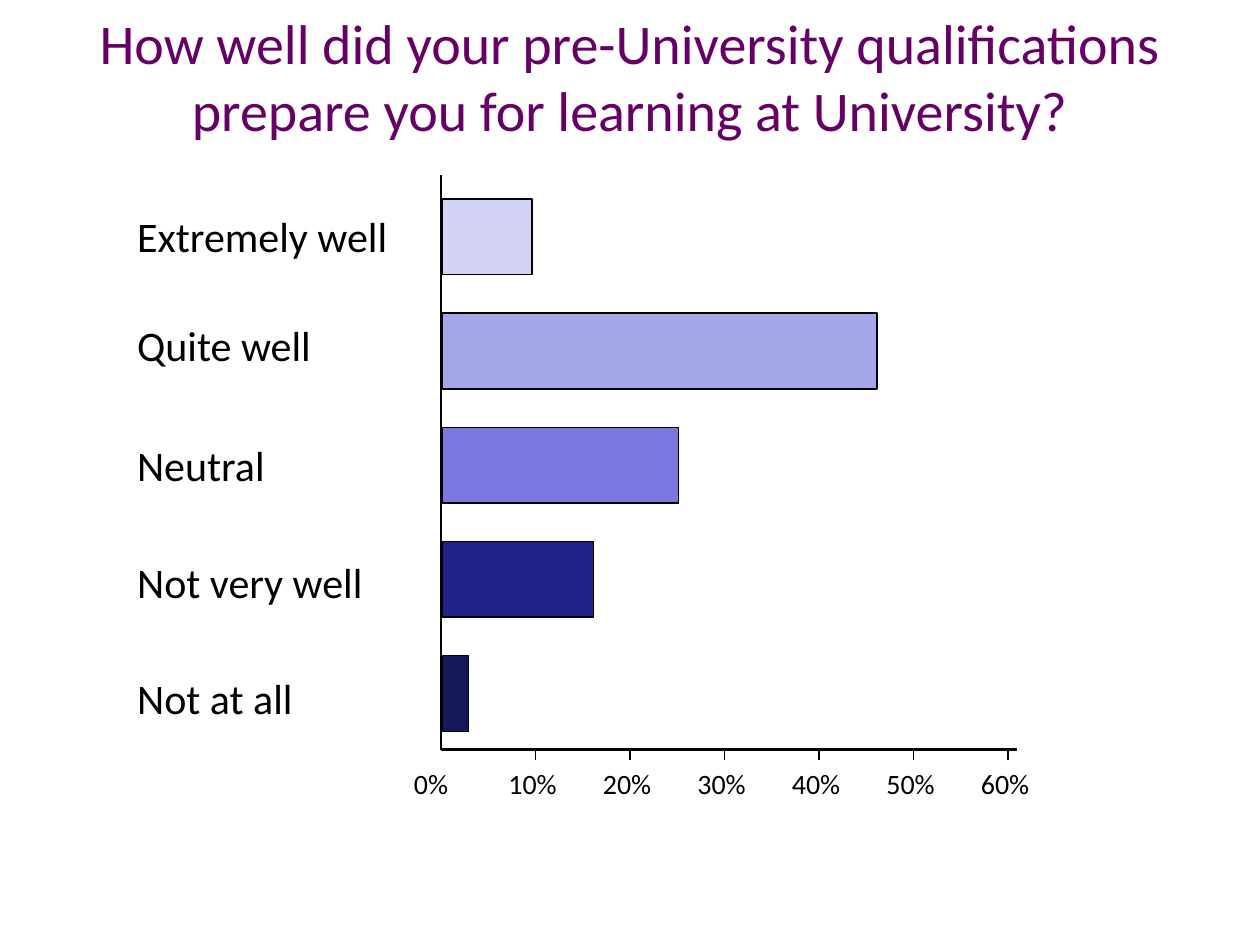
from dataclasses import dataclass

from lxml import etree
from pptx import Presentation
from pptx.dml.color import RGBColor
from pptx.enum.shapes import MSO_CONNECTOR, MSO_SHAPE
from pptx.enum.text import MSO_ANCHOR, PP_ALIGN
from pptx.oxml.ns import qn
from pptx.util import Pt

STRAIGHT = MSO_CONNECTOR.STRAIGHT
RECTANGLE = MSO_SHAPE.RECTANGLE
MIDDLE = MSO_ANCHOR.MIDDLE
CENTER = PP_ALIGN.CENTER


@dataclass(frozen=True)
class Theme:
    font: str = "Calibri"
    title: str = "660066"
    ink: str = "000000"
    title_size: float = 32
    answer_size: float = 24
    scale_size: float = 16
    axis_width: float = 1.5
    thin_width: float = 0.75


@dataclass(frozen=True)
class Answer:
    label: str
    percent: float
    color: str
    label_top: float
    label_width: float


THEME = Theme()
ANSWERS = [
    Answer("Extremely well", 9.5, "D2D2F4", 116.6, 178.5),
    Answer("Quite well", 46, "A5A5E9", 179.3, 133),
    Answer("Neutral", 25, "7878DE", 247.7, 99.5),
    Answer("Not very well", 16, "22228B", 314.6, 156),
    Answer("Not at all", 2.8, "17175C", 380.9, 121),
]

# Plot geometry in points
AXIS_X, AXIS_TOP, AXIS_Y, AXIS_RIGHT = 252, 100, 428.4, 581
BAR_LEFT, BAR_TOP, BAR_PITCH, BAR_HEIGHT = 252.7, 113.75, 65.2, 43.3
PER_PERCENT = 5.4
TICK_LENGTH = 5.8
LABEL_LEFT, LABEL_HEIGHT = 71.3, 36
SCALE_SHIFT, SCALE_TOP, SCALE_WIDTH, SCALE_HEIGHT = -22.5, 434.7, 45.4, 26.6


def style_run(r, size: float, color: str) -> None:
    r.font.name = THEME.font
    r.font.size = Pt(size)
    r.font.color.rgb = RGBColor.from_string(color)


def add_label(s, text: str, x: float, y: float, w: float, h: float,
              size: float) -> None:
    tf = s.shapes.add_textbox(Pt(x), Pt(y), Pt(w), Pt(h)).text_frame
    tf.word_wrap = False
    tf.text = text
    style_run(tf.paragraphs[0].runs[0], size, THEME.ink)


def add_line(s, x1: float, y1: float, x2: float, y2: float,
             width: float) -> None:
    line = s.shapes.add_connector(STRAIGHT, Pt(x1), Pt(y1), Pt(x2), Pt(y2))
    line.line.color.rgb = RGBColor.from_string(THEME.ink)
    line.line.width = Pt(width)
    etree.SubElement(line._element.spPr, qn("a:effectLst"))


def add_bar(s, answer: Answer, top: float) -> None:
    bar = s.shapes.add_shape(RECTANGLE, Pt(BAR_LEFT), Pt(top),
                             Pt(answer.percent * PER_PERCENT), Pt(BAR_HEIGHT))
    bar.shadow.inherit = False
    bar.fill.solid()
    bar.fill.fore_color.rgb = RGBColor.from_string(answer.color)
    bar.line.color.rgb = RGBColor.from_string(THEME.ink)
    bar.line.width = Pt(THEME.thin_width)


def add_title(s, text: str) -> None:
    sp = s.shapes.title
    sp.left, sp.top, sp.width, sp.height = Pt(0), Pt(9.4), Pt(720), Pt(67.7)
    tf = sp.text_frame
    tf.text = text
    tf.vertical_anchor = MIDDLE
    p = tf.paragraphs[0]
    p.alignment = CENTER
    style_run(p.runs[0], THEME.title_size, THEME.title)


def main() -> None:
    prs = Presentation()
    prs.slide_width, prs.slide_height = Pt(720), Pt(540)
    s = prs.slides.add_slide(prs.slide_layouts[5])
    add_title(s, "How well did your pre-University qualifications "
                 "prepare you for learning at University?")

    # Axes
    add_line(s, AXIS_X, AXIS_TOP, AXIS_X, AXIS_Y, THEME.axis_width)
    add_line(s, AXIS_X, AXIS_Y, AXIS_RIGHT, AXIS_Y, THEME.axis_width)

    # Answers with their bars
    for i, answer in enumerate(ANSWERS):
        add_label(s, answer.label, LABEL_LEFT, answer.label_top,
                  answer.label_width, LABEL_HEIGHT, THEME.answer_size)
        add_bar(s, answer, BAR_TOP + i * BAR_PITCH)

    # Percentage scale
    for percent in range(0, 61, 10):
        x = AXIS_X + percent * PER_PERCENT
        if percent:
            add_line(s, x, AXIS_Y, x, AXIS_Y + TICK_LENGTH, THEME.thin_width)
        add_label(s, f"{percent}%", x + SCALE_SHIFT, SCALE_TOP,
                  SCALE_WIDTH, SCALE_HEIGHT, THEME.scale_size)

    prs.save("out.pptx")


if __name__ == "__main__":
    main()
